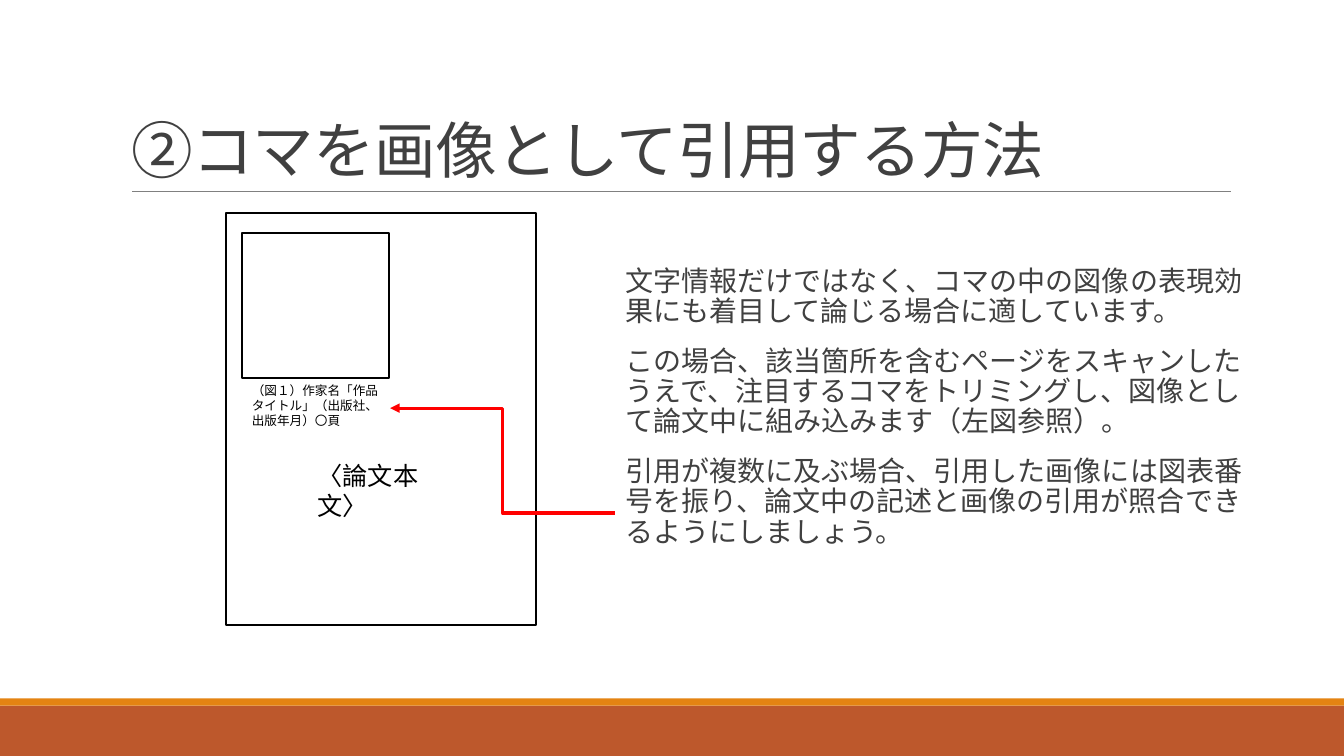
from pptx import Presentation
from pptx.dml.color import RGBColor
from pptx.enum.shapes import MSO_CONNECTOR as Link, MSO_SHAPE as Shape
from pptx.enum.text import MSO_ANCHOR as Anchor, MSO_AUTO_SIZE as Fit, PP_ALIGN as Align
from pptx.oxml.ns import qn
from pptx.util import Inches, Pt
from lxml.etree import SubElement

TITLE = "②コマを画像として引用する方法"
BODY = [
    "文字情報だけではなく、コマの中の図像の表現効果にも着目して論じる場合に適しています。",
    "この場合、該当箇所を含むページをスキャンしたうえで、注目するコマをトリミングし、図像として論文中に組み込みます（左図参照）。",
    "引用が複数に及ぶ場合、引用した画像には図表番号を振り、論文中の記述と画像の引用が照合できるようにしましょう。",
]
CAPTION = "（図１）作家名「作品タイトル」（出版社、出版年月）〇頁"
THESIS = "〈論文本文〉"

BANDS = [((0, 7, 13.33, 0.5), "BD582C"), ((0, 6.93, 13.33, 0.07), "E48312")]
PAGE = (2.24, 2.11, 3.08, 4.09)
PANEL = (2.4, 2.31, 1.46, 1.44)
INK, BLACK, RED = "404040", "000000", "FF0000"


def color(code):
    return RGBColor.from_string(code)


def inches(box):
    return [Inches(v) for v in box]


def rect(box, fill=None, line=None):
    shape = slide.shapes.add_shape(Shape.RECTANGLE, *inches(box))
    shape.shadow.inherit = False
    if fill:
        shape.fill.solid()
        shape.fill.fore_color.rgb = color(fill)
    else:
        shape.fill.background()
    if line:
        shape.line.color.rgb = color(line)
        shape.line.width = Pt(1.25)
    else:
        shape.line.fill.background()


def link(start, end, code, width, kind=Link.STRAIGHT, arrow=False):
    line = slide.shapes.add_connector(kind, *inches(start + end))
    line.line.color.rgb = color(code)
    line.line.width = Pt(width)
    if arrow:
        SubElement(line.line._get_or_add_ln(), qn("a:tailEnd"), type="triangle")
    SubElement(line._element.spPr, qn("a:effectLst"))


def write(shape, lines, size, font="Calibri", code=BLACK, anchor=Anchor.TOP,
          leading=None, before=0, after=0, indent=0, track=0, side=0.1):
    frame = shape.text_frame
    frame.word_wrap, frame.auto_size = True, Fit.NONE
    frame.vertical_anchor = anchor
    frame.margin_left = frame.margin_right = Inches(side)
    frame.text = "\n".join(lines)
    for para in frame.paragraphs:
        para.alignment = Align.LEFT
        para.line_spacing = leading
        para.space_before, para.space_after = Pt(before), Pt(after)
        para._p.get_or_add_pPr().set("marL", str(Inches(indent)))
        run = para.runs[0]
        run.font.size, run.font.name = Pt(size), font
        run.font.color.rgb = color(code)
        if track:
            run._r.get_or_add_rPr().set("spc", str(int(track * 100)))


def text(box, lines, size, **style):
    write(slide.shapes.add_textbox(*inches(box)), lines, size, **style)


deck = Presentation()
deck.slide_width, deck.slide_height = inches((13.33, 7.5))
slide = deck.slides.add_slide(deck.slide_layouts[5])

for box, fill in BANDS:
    rect(box, fill=fill)
link((1.31, 1.9), (12.21, 1.9), "808080", 0.5)

title = slide.shapes.title
title.left, title.top, title.width, title.height = inches((1.2, 0.31, 11, 1.59))
write(title, [TITLE], 44, font="Arial", code=INK, anchor=Anchor.BOTTOM,
      leading=0.85, track=-0.5)
text((6.1, 2.6, 6.23, 3.91), BODY, 20, font="Arial", code=INK,
     leading=0.9, before=12, after=2, indent=0.1, side=0)

rect(PAGE, line=BLACK)
rect(PANEL, line=BLACK)
text((2.4, 3.75, 1.46, 0.56), [CAPTION], 9)
text((3.05, 4.52, 1.46, 0.7), [THESIS], 18)
link((6.1, 5.09), (3.87, 4.05), RED, 2.25, kind=Link.ELBOW, arrow=True)

deck.save("out.pptx")
